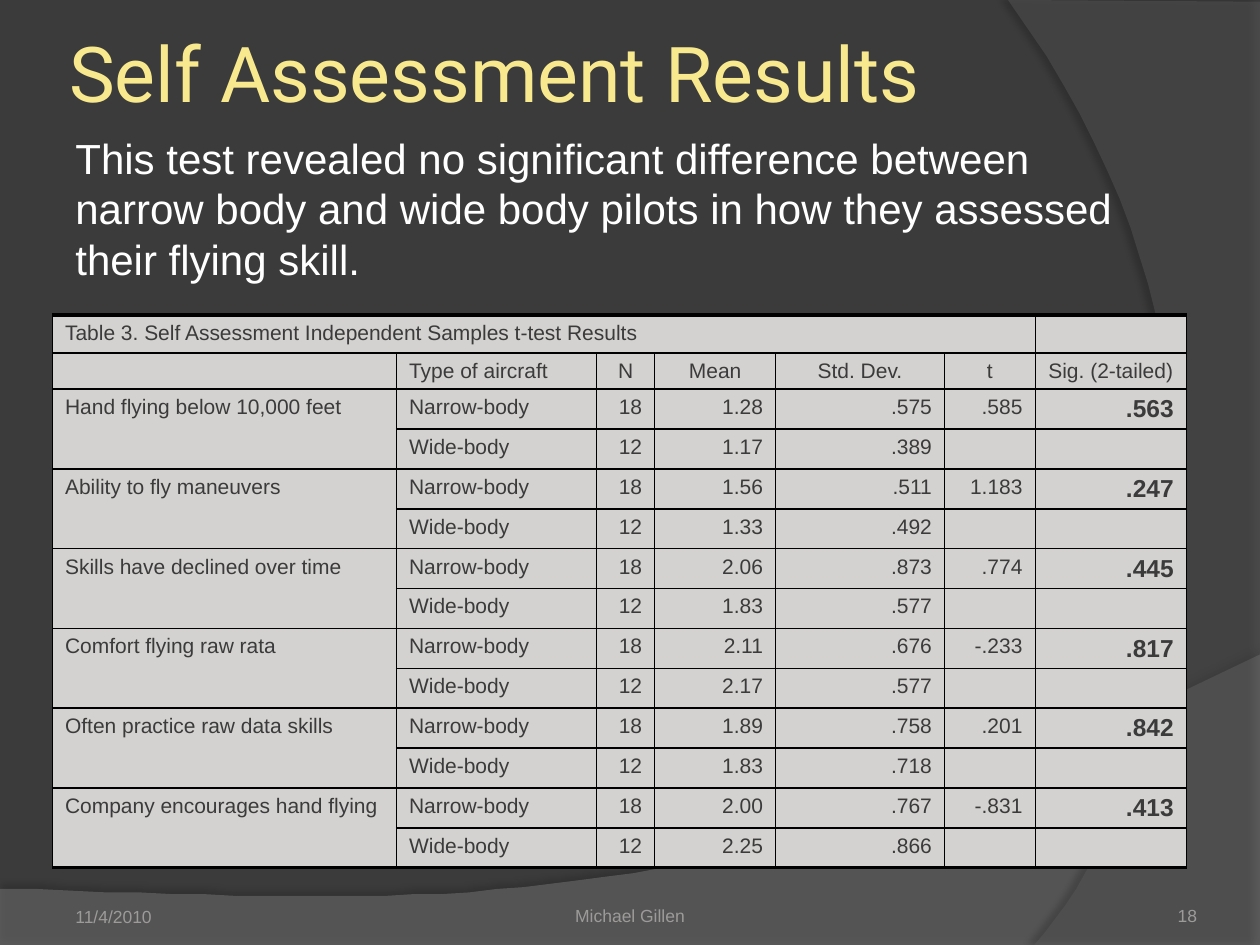
from lxml.etree import SubElement
from pptx import Presentation
from pptx.dml.color import RGBColor
from pptx.enum.text import MSO_ANCHOR, MSO_AUTO_SIZE, PP_ALIGN
from pptx.oxml import parse_xml
from pptx.oxml.ns import qn
from pptx.util import Pt

BACKGROUND = RGBColor(0x3B, 0x3B, 0x3B)
WAVE_GREY = RGBColor(0x7F, 0x7F, 0x7F)
SIDE_GREY = RGBColor(0x5E, 0x5E, 0x5E)
YELLOW = RGBColor(0xF9, 0xE9, 0x8E)
WHITE = RGBColor(0xFF, 0xFF, 0xFF)
CELL_GREY = RGBColor(0xD4, 0xD2, 0xD0)
FOOTER_GREY = RGBColor(0x9D, 0x9B, 0x9A)
DRAWING_NS = "http://schemas.openxmlformats.org/drawingml/2006/main"
LEFT, CENTER, RIGHT = PP_ALIGN.LEFT, PP_ALIGN.CENTER, PP_ALIGN.RIGHT

TITLE = "Self Assessment Results"
FINDING = ("This test revealed no significant difference between narrow body and wide body "
           "pilots in how they assessed their flying skill.")
CAPTION = "Table 3. Self Assessment Independent Samples t-test Results"
HEADERS = ["", "Type of aircraft", "N", "Mean", "Std. Dev.", "t", "Sig. (2-tailed)"]
# question, narrow-body (mean, deviation), wide-body (mean, deviation), t, significance
RESULTS = [
    ("Hand flying below 10,000 feet", ("1.28", ".575"), ("1.17", ".389"), ".585", ".563"),
    ("Ability to fly maneuvers", ("1.56", ".511"), ("1.33", ".492"), "1.183", ".247"),
    ("Skills have declined over time", ("2.06", ".873"), ("1.83", ".577"), ".774", ".445"),
    ("Comfort flying raw rata", ("2.11", ".676"), ("2.17", ".577"), "-.233", ".817"),
    ("Often practice raw data skills", ("1.89", ".758"), ("1.83", ".718"), ".201", ".842"),
    ("Company encourages hand flying", ("2.00", ".767"), ("2.25", ".866"), "-.831", ".413"),
]
COLUMN_WIDTHS = [196.6, 114.5, 33.1, 69.1, 96.5, 51.8, 86.4]
ROW_HEIGHTS = [21.6, 20.8] + [22.8] * (2 * len(RESULTS))
# text, left, top, width, alignment, insets (left, top, right, bottom)
FOOTERS = [
    ("11/4/2010", 36, 492.5, 168, LEFT, (7.2, 3.6, 7.2, 0)),
    ("Michael Gillen", 246, 492, 228, CENTER, (0, 3.6, 0, 0)),
    ("18", 516, 492, 168, RIGHT, (0, 0, 0, 0)),
]


def curve(start, control_1, control_2, end, steps=40):
    """Points along a cubic Bezier curve."""
    points = []
    for step in range(steps + 1):
        t = step / steps
        weights = ((1 - t) ** 3, 3 * t * (1 - t) ** 2, 3 * t * t * (1 - t), t ** 3)
        corners = (start, control_1, control_2, end)
        points.append(tuple(sum(w * c[axis] for w, c in zip(weights, corners))
                            for axis in (0, 1)))
    return points


def add_backdrop(slide, points, color, opacity, shadow_opacity, distance, direction):
    builder = slide.shapes.build_freeform(*points[0], scale=Pt(1))
    builder.add_line_segments(points[1:], close=True)
    shape = builder.convert_to_shape()
    shape.fill.solid()
    shape.fill.fore_color.rgb = color
    shape.line.fill.background()
    properties = shape._element.spPr
    SubElement(properties.find(".//" + qn("a:srgbClr")), qn("a:alpha"), val=str(opacity * 1000))
    properties.append(parse_xml(
        f'<a:effectLst xmlns:a="{DRAWING_NS}"><a:outerShdw blurRad="{Pt(4)}" '
        f'dist="{Pt(distance)}" dir="{direction * 60000}" algn="ctr" rotWithShape="0">'
        f'<a:srgbClr val="000000"><a:alpha val="{shadow_opacity * 1000}"/></a:srgbClr>'
        '</a:outerShdw></a:effectLst>'))
    return shape


def write(frame, text, size, color, font="Arial", align=LEFT, bold=False):
    frame.text = text
    para = frame.paragraphs[0]
    para.alignment = align
    # An empty paragraph takes its height from the paragraph font
    for target in [para, *para.runs]:
        target.font.size = Pt(size)
        target.font.name = font
        target.font.bold = bold
        target.font.color.rgb = color
    if not text:
        SubElement(para._p, qn("a:endParaRPr"), sz=str(size * 100))


def set_insets(frame, insets):
    frame.margin_left, frame.margin_top, frame.margin_right, frame.margin_bottom = map(Pt, insets)


def add_text(slide, text, left, top, width, height, size, color, align=LEFT,
             anchor=MSO_ANCHOR.TOP, insets=(7.2, 3.6, 7.2, 3.6)):
    box = slide.shapes.add_textbox(Pt(left), Pt(top), Pt(width), Pt(height))
    frame = box.text_frame
    frame.word_wrap = True
    frame.vertical_anchor = anchor
    set_insets(frame, insets)
    write(frame, text, size, color, align=align)


def set_borders(cell, top, bottom):
    properties = cell._tc.get_or_add_tcPr()
    sides = [("lnL", 0.75), ("lnR", 0.75), ("lnT", top), ("lnB", bottom)]
    for index, (side, width) in enumerate(sides):
        properties.insert(index, parse_xml(
            f'<a:{side} xmlns:a="{DRAWING_NS}" w="{Pt(width)}"><a:solidFill>'
            f'<a:srgbClr val="000000"/></a:solidFill></a:{side}>'))


def table_rows():
    rows = [[CAPTION] + [""] * 6, HEADERS]
    for question, narrow, wide, t_value, significance in RESULTS:
        rows.append([question, "Narrow-body", "18", *narrow, t_value, significance])
        rows.append(["", "Wide-body", "12", *wide, "", ""])
    return rows


def add_results_table(slide):
    rows = table_rows()
    table = slide.shapes.add_table(len(rows), len(COLUMN_WIDTHS), Pt(30), Pt(180),
                                   Pt(sum(COLUMN_WIDTHS)), Pt(sum(ROW_HEIGHTS))).table
    table.first_row = table.horz_banding = False
    for column, width in zip(table.columns, COLUMN_WIDTHS):
        column.width = Pt(width)
    for row, height in zip(table.rows, ROW_HEIGHTS):
        row.height = Pt(height)
    last = len(rows) - 1
    for r, values in enumerate(rows):
        for c, value in enumerate(values):
            cell = table.cell(r, c)
            cell.fill.solid()
            cell.fill.fore_color.rgb = CELL_GREY
            cell.margin_bottom = Pt(3)
            significant = r > 1 and c == 6 and value != ""
            align = LEFT if c < 2 else CENTER if r == 1 else RIGHT
            write(cell.text_frame, value, 14 if significant else 12, BACKGROUND,
                  align=align, bold=significant)
            ends_table = r == last or (r == last - 1 and c == 0)
            set_borders(cell, 2 if r == 0 else 1, 2 if ends_table else 1)
    table.cell(0, 0).merge(table.cell(0, 5))
    for r in range(2, len(rows), 2):
        table.cell(r, 0).merge(table.cell(r + 1, 0))


def main():
    deck = Presentation()
    deck.slide_width, deck.slide_height = Pt(720), Pt(540)
    slide = deck.slides.add_slide(deck.slide_layouts[5])
    slide.background.fill.solid()
    slide.background.fill.fore_color.rgb = BACKGROUND

    wave = [(0, 540), (720, 540)] + curve((720, 374.4), (402.5, 524.9), (281.5, 517.7), (0, 507.6))
    side = [(720, 1.4), (720, 540)] + curve((591.1, 540), (673.2, 445.7), (733, 216), (576, 0))
    backdrops = [add_backdrop(slide, wave, WAVE_GREY, 45, 35, 3.5, 270),
                 add_backdrop(slide, side, SIDE_GREY, 40, 45, 4, 180)]
    for index, shape in enumerate(backdrops):
        slide.shapes._spTree.insert(2 + index, shape._element)

    title = slide.shapes.title
    title.left, title.top, title.width, title.height = Pt(36), Pt(21.6), Pt(648), Pt(38.2)
    frame = title.text_frame
    frame.vertical_anchor = MSO_ANCHOR.MIDDLE
    frame.auto_size = MSO_AUTO_SIZE.NONE
    set_insets(frame, (3.6, 3.6, 3.6, 3.6))
    write(frame, TITLE, 44, YELLOW, font="Roboto")

    add_results_table(slide)
    for text, left, top, width, align, insets in FOOTERS:
        add_text(slide, text, left, top, width, 37.4, 10, FOOTER_GREY, align,
                 MSO_ANCHOR.BOTTOM, insets)
    add_text(slide, FINDING, 36, 72, 630, 94.3, 24, WHITE)
    deck.save("out.pptx")


if __name__ == "__main__":
    main()
